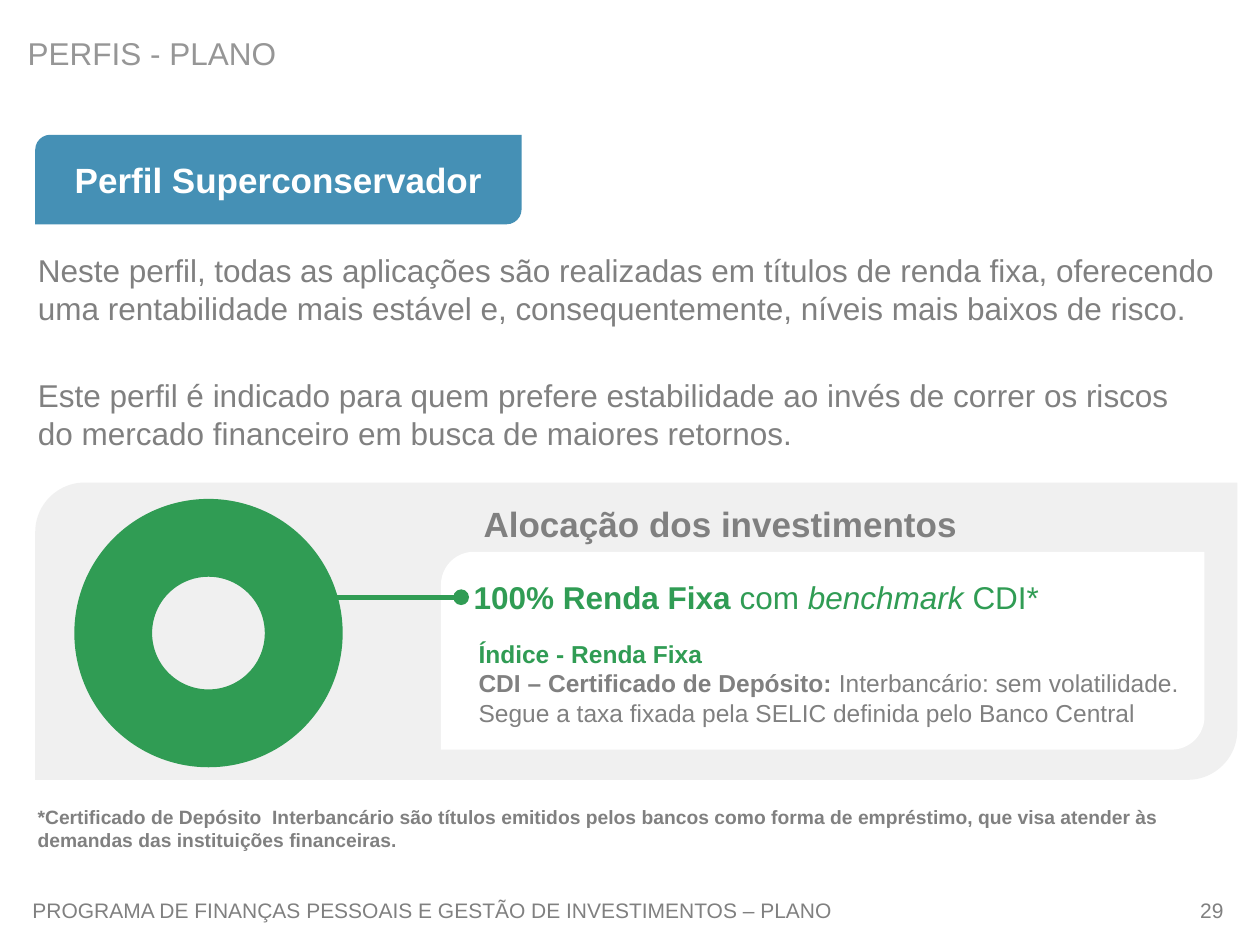
from dataclasses import dataclass

from lxml import etree
from pptx import Presentation
from pptx.dml.color import RGBColor
from pptx.enum.shapes import MSO_CONNECTOR, MSO_SHAPE
from pptx.enum.text import MSO_ANCHOR, MSO_AUTO_SIZE, PP_ALIGN
from pptx.oxml.ns import qn
from pptx.util import Inches, Pt

FONT = "Arial"
GRAY = RGBColor(0x80, 0x80, 0x80)
TITLE_GRAY = RGBColor(0x96, 0x96, 0x96)
PANEL_GRAY = RGBColor(0xF0, 0xF0, 0xF0)
GREEN = RGBColor(0x30, 0x9C, 0x54)
BLUE = RGBColor(0x45, 0x90, 0xB5)
WHITE = RGBColor(0xFF, 0xFF, 0xFF)

DIAGONAL = MSO_SHAPE.ROUND_2_DIAG_RECTANGLE
DONUT = MSO_SHAPE.DONUT
STRAIGHT = MSO_CONNECTOR.STRAIGHT
TOP, MIDDLE = MSO_ANCHOR.TOP, MSO_ANCHOR.MIDDLE
LEFT, CENTER, RIGHT = PP_ALIGN.LEFT, PP_ALIGN.CENTER, PP_ALIGN.RIGHT


@dataclass(frozen=True)
class Area:
    left: float
    top: float
    width: float
    height: float

    def lengths(self) -> tuple:
        return tuple(map(Inches, (self.left, self.top, self.width, self.height)))


@dataclass(frozen=True)
class Span:
    text: str
    bold: bool = False
    italic: bool = False


@dataclass(frozen=True)
class Line:
    spans: tuple[Span, ...]
    size: float
    color: RGBColor = GRAY
    align: PP_ALIGN = LEFT


@dataclass(frozen=True)
class Label:
    area: Area
    lines: tuple[Line, ...]
    anchor: MSO_ANCHOR = TOP
    inset: bool = True


def set_font(font, size: float, color: RGBColor) -> None:
    font.name = FONT
    font.size = Pt(size)
    font.color.rgb = color


def write_line(para, line: Line) -> None:
    para.alignment = line.align
    set_font(para.font, line.size, line.color)
    for part in line.spans:
        span = para.add_run()
        span.text = part.text
        set_font(span.font, line.size, line.color)
        span.font.bold = part.bold
        span.font.italic = part.italic


def add_label(slide, label: Label) -> None:
    frame = slide.shapes.add_textbox(*label.area.lengths()).text_frame
    frame.word_wrap = True
    frame.vertical_anchor = label.anchor
    if not label.inset:
        frame.margin_left = frame.margin_right = 0
        frame.margin_top = frame.margin_bottom = 0
    for index, line in enumerate(label.lines):
        write_line(frame.add_paragraph() if index else frame.paragraphs[0], line)


def add_filled(slide, kind: MSO_SHAPE, area: Area, color: RGBColor):
    shape = slide.shapes.add_shape(kind, *area.lengths())
    shape.shadow.inherit = False
    shape.fill.solid()
    shape.fill.fore_color.rgb = color
    shape.line.fill.background()
    return shape


def add_pointer(slide, start: float, end: float, height: float) -> None:
    """Draw a level line that ends in a dot."""
    pointer = slide.shapes.add_connector(
        STRAIGHT, Inches(start), Inches(height), Inches(end), Inches(height))
    pointer.line.color.rgb = GREEN
    pointer.line.width = Pt(3)
    etree.SubElement(pointer.line._get_or_add_ln(), qn("a:tailEnd"), type="oval")
    etree.SubElement(pointer._element.spPr, qn("a:effectLst"))


def fill_placeholder(holder, area: Area, texts: tuple[str, ...], color: RGBColor,
                     anchor: MSO_ANCHOR, gap: float = 0) -> None:
    holder.left, holder.top, holder.width, holder.height = area.lengths()
    frame = holder.text_frame
    frame.auto_size = MSO_AUTO_SIZE.NONE
    frame.word_wrap = True
    frame.vertical_anchor = anchor
    for index, text in enumerate(texts):
        para = frame.add_paragraph() if index else frame.paragraphs[0]
        para.text = text
        para.alignment = LEFT
        para.space_before = Pt(gap if index else 0)
        properties = para._p.get_or_add_pPr()
        properties.set("marL", "0")
        properties.set("indent", "0")
        etree.SubElement(properties, qn("a:buNone"))
        set_font(para.font, 18, color)


BODY = (
    "Neste perfil, todas as aplicações são realizadas em títulos de renda fixa, "
    "oferecendo uma rentabilidade mais estável e, consequentemente, níveis mais "
    "baixos de risco.",
    "Este perfil é indicado para quem prefere estabilidade ao invés de correr os "
    "riscos \vdo mercado financeiro em busca de maiores retornos.",
)

LABELS = (
    Label(Area(3.74, 3.94, 5.83, 0.44),
          (Line((Span("Alocação dos investimentos", bold=True),), 20),)),
    Label(Area(3.66, 4.54, 5.51, 0.4),
          (Line((Span("100% Renda Fixa ", bold=True), Span("com"),
                 Span(" benchmark ", italic=True), Span("CDI*")), 18, GREEN),)),
    Label(Area(3.7, 5.02, 5.86, 0.81),
          (Line((Span("Índice - Renda Fixa", bold=True),), 14, GREEN),
           Line((Span("CDI – Certificado de Depósito: ", bold=True),
                 Span("Interbancário: sem volatilidade. Segue a taxa fixada pela "
                      "SELIC definida pelo Banco Central")), 14))),
    Label(Area(0.2, 6.34, 9.61, 0.47),
          (Line((Span("*Certificado de Depósito  Interbancário são títulos emitidos "
                      "pelos bancos como forma de empréstimo, que visa atender às "
                      "demandas das instituições financeiras.", bold=True),), 11),)),
    Label(Area(0.16, 6.95, 6.8, 0.55),
          (Line((Span("PROGRAMA DE FINANÇAS PESSOAIS E GESTÃO DE INVESTIMENTOS "
                      "– PLANO"),), 12),), anchor=MIDDLE),
    Label(Area(9.44, 7.12, 0.27, 0.2),
          (Line((Span("29"),), 12, align=RIGHT),), inset=False),
)


def main() -> None:
    deck = Presentation()
    deck.slide_width, deck.slide_height = Inches(10), Inches(7.5)
    slide = deck.slides.add_slide(deck.slide_layouts[1])

    fill_placeholder(slide.shapes.title, Area(0.12, 0, 3.37, 0.84),
                     ("PERFIS - PLANO",), TITLE_GRAY, MIDDLE)
    fill_placeholder(slide.placeholders[1], Area(0.2, 1.94, 9.61, 1.8),
                     BODY, GRAY, TOP, gap=28.5)

    banner = add_filled(slide, DIAGONAL, Area(0.28, 1.07, 3.86, 0.71), BLUE)
    banner.text_frame.vertical_anchor = MIDDLE
    write_line(banner.text_frame.paragraphs[0],
               Line((Span("Perfil Superconservador", bold=True),), 20, WHITE, CENTER))

    add_filled(slide, DIAGONAL, Area(0.28, 3.83, 9.54, 2.36), PANEL_GRAY)
    add_filled(slide, DIAGONAL, Area(3.5, 4.38, 6.06, 1.57), WHITE)
    ring = add_filled(slide, DONUT, Area(0.59, 3.96, 2.13, 2.13), GREEN)
    ring.adjustments[0] = 0.29
    add_pointer(slide, start=2.56, end=3.66, height=4.74)

    for label in LABELS:
        add_label(slide, label)

    deck.save("out.pptx")


if __name__ == "__main__":
    main()
